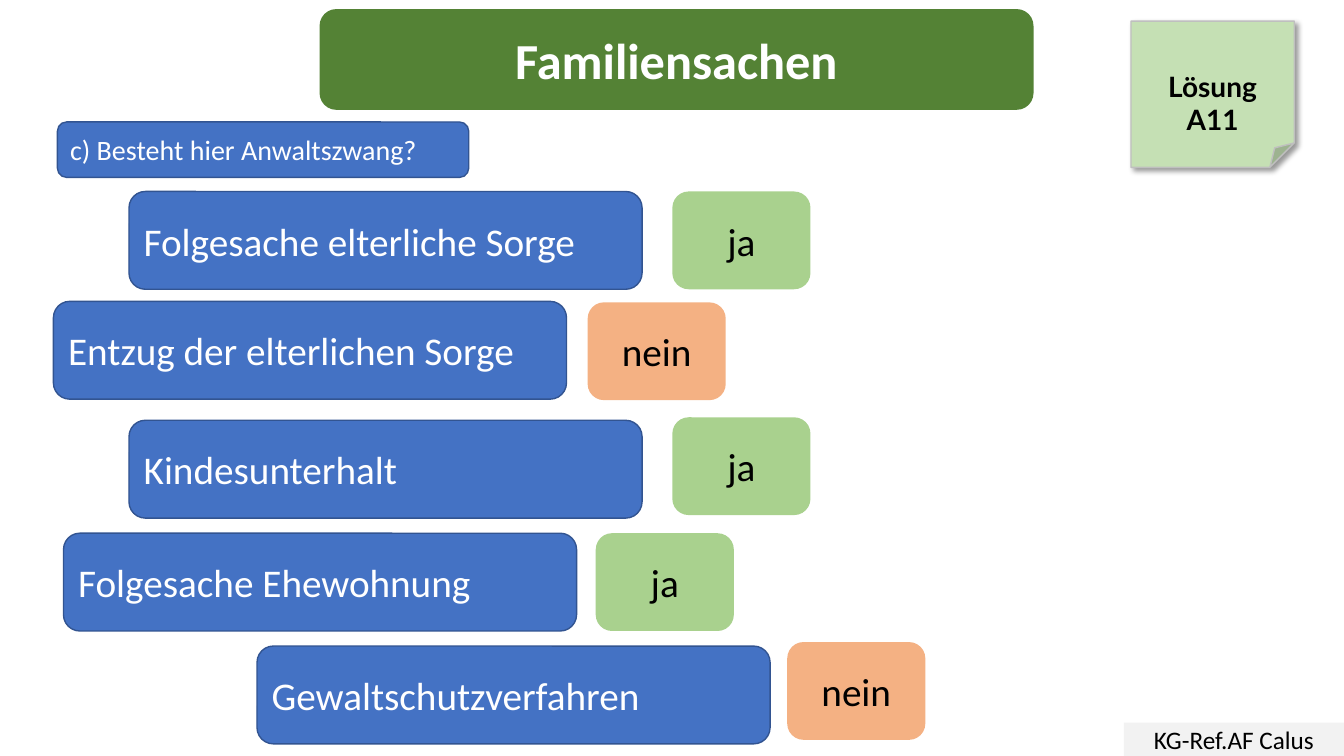
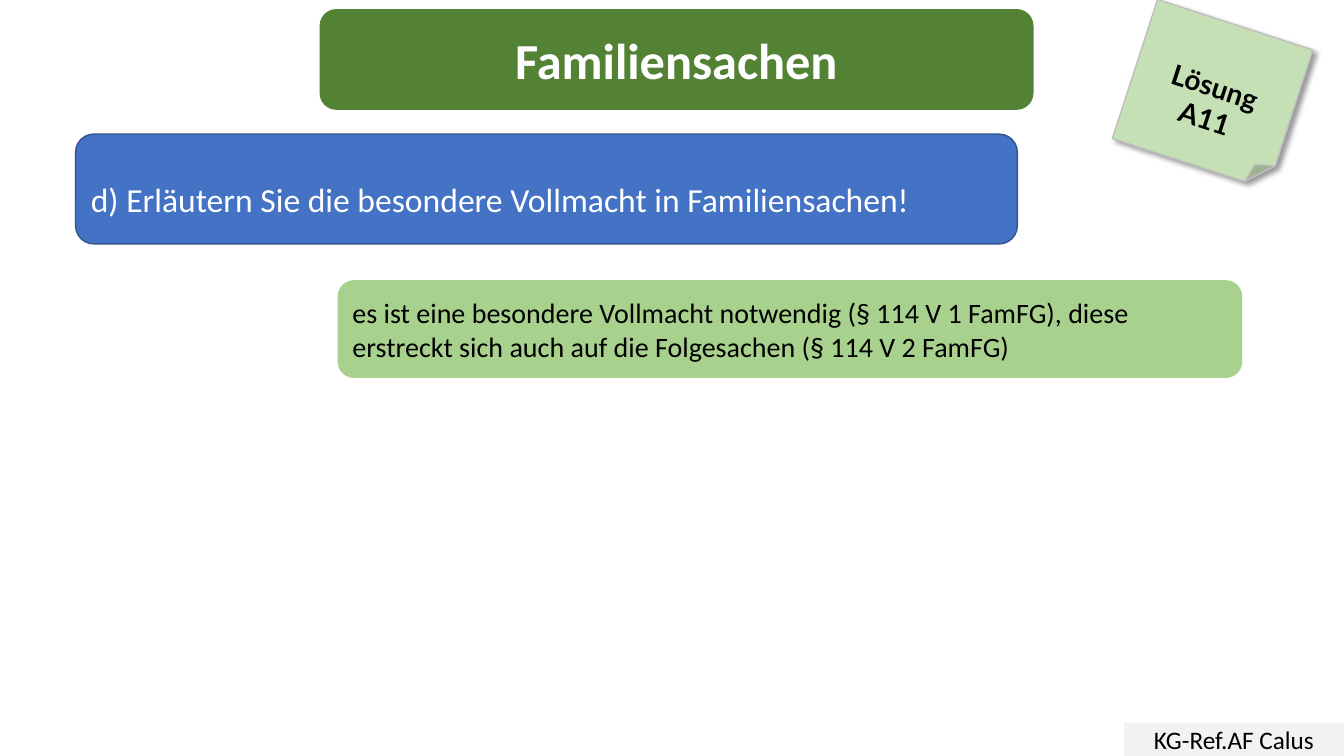
from dataclasses import dataclass

from lxml.etree import SubElement
from pptx import Presentation
from pptx.dml.color import RGBColor
from pptx.enum.shapes import MSO_SHAPE as Shape
from pptx.enum.text import MSO_ANCHOR as Anchor, PP_ALIGN as Align
from pptx.oxml.ns import qn
from pptx.util import Inches, Pt

WIDTH, HEIGHT = Inches(13.33), Inches(7.5)
COLUMNS, ROWS = 40, 30


@dataclass(frozen=True)
class Theme:
    # Colours
    title: str = "548235"
    footer: str = "F2F2F2"
    note: str = "C5E0B4"
    note_line: str = "BFBFBF"
    question: str = "4472C4"
    question_line: str = "325491"
    yes: str = "A9D18E"
    no: str = "F4B183"
    light: str = "FFFFFF"
    dark: str = "000000"
    # Fonts and type sizes
    font: str = "Calibri"
    note_font: str = "Lato"
    title_size: int = 36
    case_size: int = 28
    task_size: int = 24
    body_size: int = 20
    footer_size: int = 18


THEME = Theme()

# Case, column and row of its label, answer, column and row of the answer
CASES = [
    ("Folgesache elterliche Sorge", 3.84, 7.6, "ja", 20.01, 7.6),
    ("Entzug der elterlichen Sorge", 1.59, 11.96, "nein", 17.49, 12),
    ("Kindesunterhalt", 3.84, 16.68, "ja", 20.01, 16.56),
    ("Folgesache Ehewohnung", 1.89, 21.16, "ja", 17.73, 21.16),
    ("Gewaltschutzverfahren", 7.65, 25.64, "nein", 23.43, 25.48),
]
LABEL_COLUMNS, ANSWER_COLUMNS, CASE_ROWS = 15.27, 4.11, 3.88


def grid(column, row, columns, rows):
    """Turn grid units into left, top, width and height."""
    across, down = WIDTH / COLUMNS, HEIGHT / ROWS
    return [round(length) for length in
            (column * across, row * down, columns * across, rows * down)]


# Kinds of element

def add_box(page, cell, text, fill, size, color=THEME.dark, line=None,
            kind=Shape.ROUNDED_RECTANGLE, align=Align.LEFT,
            font=THEME.font, bold=False, spacing=None):
    box = page.shapes.add_shape(kind, *grid(*cell))
    box.shadow.inherit = False
    box.fill.solid()
    box.fill.fore_color.rgb = RGBColor.from_string(fill)
    if line:
        box.line.color.rgb = RGBColor.from_string(line)
        box.line.width = Pt(1)
    else:
        box.line.fill.background()

    frame = box.text_frame
    frame.word_wrap = True
    frame.vertical_anchor = Anchor.MIDDLE
    frame.text = text
    formats = {"name": font, "size": Pt(size), "bold": bold}
    for para in frame.paragraphs:
        para.alignment = align
        para.line_spacing = spacing
        for span in para.runs:
            for name, value in formats.items():
                setattr(span.font, name, value)
            span.font.color.rgb = RGBColor.from_string(color)
    return box


def add_question(page, cell, text, size, spacing=None):
    add_box(page, cell, text, THEME.question, size, THEME.light,
            THEME.question_line, spacing=spacing)


def add_case(page, label, column, row, answer, answer_column, answer_row):
    add_question(page, (column, row, LABEL_COLUMNS, CASE_ROWS), label,
                 THEME.case_size)
    fill = THEME.yes if answer == "ja" else THEME.no
    add_box(page, (answer_column, answer_row, ANSWER_COLUMNS, CASE_ROWS),
            answer, fill, THEME.case_size, align=Align.CENTER)


def add_shadow(box):
    effects = box._element.spPr.find(qn("a:effectLst"))
    shadow = SubElement(effects, qn("a:outerShdw"), blurRad=str(Pt(4)),
                        dist=str(Pt(3)), dir="2700000", algn="tl",
                        rotWithShape="0")
    color = SubElement(shadow, qn("a:srgbClr"), val=THEME.dark)
    SubElement(color, qn("a:alpha"), val="40000")


def add_note(page, rotation):
    note = add_box(page, (33.66, 0.84, 4.86, 5.8), "Lösung\nA11", THEME.note,
                   THEME.body_size, line=THEME.note_line,
                   kind=Shape.FOLDED_CORNER, align=Align.CENTER,
                   font=THEME.note_font, bold=True)
    note.text_frame.margin_top = Inches(0.46)
    note.rotation = rotation
    add_shadow(note)


def add_page(deck, rotation=0):
    """Add a blank slide with the shared title, footer and note."""
    page = deck.slides.add_slide(deck.slide_layouts[6])
    add_box(page, (9.51, 0.36, 21.25, 4), "Familiensachen", THEME.title,
            THEME.title_size, THEME.light, align=Align.CENTER, bold=True)
    add_box(page, (33.45, 28.68, 6.55, 1.32), "KG-Ref.AF Calus",
            THEME.footer, THEME.footer_size, kind=Shape.RECTANGLE,
            align=Align.CENTER)
    add_note(page, rotation)
    return page


def main():
    deck = Presentation()
    deck.slide_width, deck.slide_height = WIDTH, HEIGHT

    # Cases with their answers
    page = add_page(deck)
    add_question(page, (1.71, 4.84, 12.24, 2.2),
                 "c) Besteht hier Anwaltszwang?", THEME.body_size)
    for case in CASES:
        add_case(page, *case)

    # Power of attorney
    page = add_page(deck, rotation=18)
    add_question(page, (2.25, 5.32, 28.03, 4.36),
                 "d) Erläutern Sie die besondere Vollmacht in "
                 "Familiensachen!", THEME.task_size, spacing=1.5)
    add_box(page, (10.05, 11.12, 26.92, CASE_ROWS),
            "es ist eine besondere Vollmacht notwendig (§ 114 V 1 FamFG), "
            "diese erstreckt sich auch auf die Folgesachen "
            "(§ 114 V 2 FamFG)", THEME.yes, THEME.body_size)

    deck.save("out.pptx")


if __name__ == "__main__":
    main()
